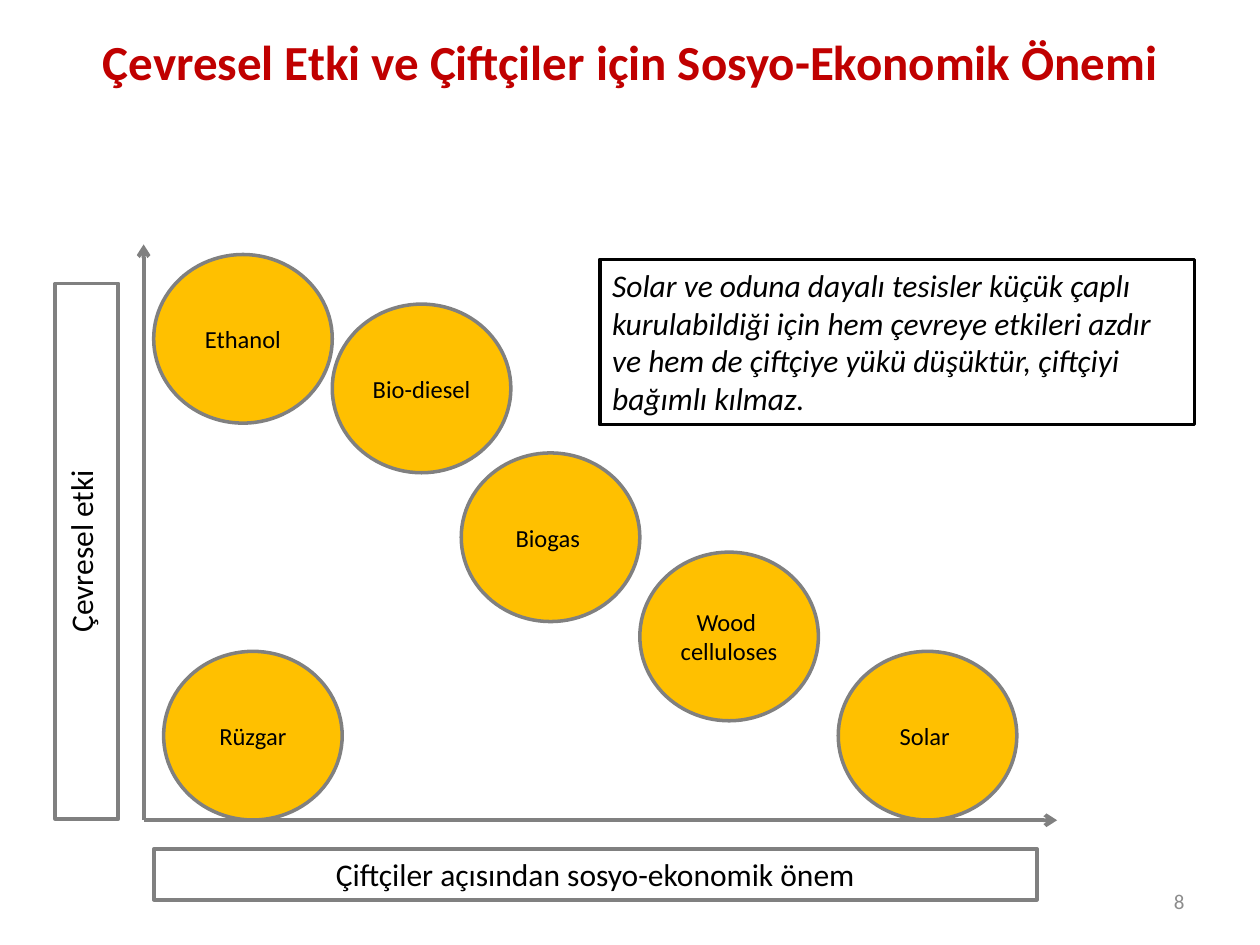
import dataclasses
import typing

import lxml.etree
import pptx
import pptx.dml.color
import pptx.enum.shapes
import pptx.enum.text
import pptx.oxml.ns
import pptx.util

Align = pptx.enum.text.PP_ALIGN
Anchor = pptx.enum.text.MSO_ANCHOR
Form = pptx.enum.shapes.MSO_SHAPE
Inch = pptx.util.Inches
UNIT = pptx.util.Cm(0.2)
LEFT, TOP = Inch(1.22), Inch(2.02)
GREY, BLACK, GOLD = "808080", "000000", "FFC000"


@dataclasses.dataclass
class Disc:
    """An energy source, placed by column and row of the unit grid."""
    name: str
    col: int
    row: int


@dataclasses.dataclass
class Panel:
    """A framed text box, measured in inches."""
    text: str
    area: tuple[float, float, float, float]
    line: str = GREY
    width: float = 2.25
    fill: typing.Optional[str] = None
    align: Align = Align.CENTER
    slant: bool = False
    turn: bool = False


DISCS = [
    Disc("Ethanol", 0, 0),
    Disc("Bio-diesel", 18, 5),
    Disc("Biogas ", 31, 20),
    Disc("Rüzgar", 1, 40),
    Disc("Solar ", 69, 40),
    Disc("Wood \ncelluloses", 49, 30),
]
PANELS = [
    Panel("Çevresel etki", (0.44, 2.25, 0.5, 4.25), turn=True),
    Panel("Çiftçiler açısından sosyo-ekonomik önem", (1.22, 6.74, 7.01, 0.4)),
    Panel("Solar ve oduna dayalı tesisler küçük çaplı kurulabildiği için hem "
          "çevreye etkileri azdır ve hem de çiftçiye yükü düşüktür, çiftçiyi "
          "bağımlı kılmaz.", (4.76, 2.06, 4.72, 1.31), BLACK, 2, "FFFFFF",
          Align.LEFT, slant=True),
]


def paint(hue: str) -> pptx.dml.color.RGBColor:
    """Turn a hex string into a colour."""
    return pptx.dml.color.RGBColor.from_string(hue)


def write(shape, text: str, size: float, hue: str = BLACK,
          align: Align = Align.CENTER, anchor: Anchor = Anchor.MIDDLE,
          bold: bool = False, slant: bool = False) -> None:
    """Set the text of a shape and format its runs."""
    frame = shape.text_frame
    frame.text = text
    frame.word_wrap = True
    frame.vertical_anchor = anchor
    for para in frame.paragraphs:
        para.alignment = align
        for run in para.runs:
            run.font.name = "Calibri"
            run.font.size = pptx.util.Pt(size)
            run.font.bold = bold
            run.font.italic = slant
            run.font.color.rgb = paint(hue)


def place(shape, area: tuple[float, float, float, float]) -> None:
    """Move a shape to an area in inches."""
    shape.left, shape.top, shape.width, shape.height = map(Inch, area)


def frame(shape, line: str, width: float, fill: typing.Optional[str]) -> None:
    """Style the outline and fill of a shape."""
    shape.shadow.inherit = False
    shape.line.color.rgb = paint(line)
    shape.line.width = pptx.util.Pt(width)
    if fill:
        shape.fill.solid()
        shape.fill.fore_color.rgb = paint(fill)
    else:
        shape.fill.background()


def draw_disc(slide, disc: Disc) -> None:
    """Draw one energy source."""
    shape = slide.shapes.add_shape(
        Form.FLOWCHART_CONNECTOR, LEFT + disc.col * UNIT,
        TOP + disc.row * UNIT, 18 * UNIT, 17 * UNIT)
    frame(shape, GREY, 2, GOLD)
    write(shape, disc.name, 14)
    shape.text_frame.word_wrap = False


def draw_panel(slide, panel: Panel) -> None:
    """Draw one framed text box."""
    shape = slide.shapes.add_shape(Form.RECTANGLE, *map(Inch, panel.area))
    frame(shape, panel.line, panel.width, panel.fill)
    write(shape, panel.text, 18, align=panel.align, anchor=Anchor.TOP,
          slant=panel.slant)
    if panel.turn:
        shape.text_frame._txBody.bodyPr.set("vert", "vert270")


def draw_axis(slide, end_x: float, end_y: float) -> None:
    """Draw an arrow from the chart's corner."""
    axis = slide.shapes.add_connector(
        pptx.enum.shapes.MSO_CONNECTOR.STRAIGHT,
        *map(Inch, (1.14, 6.51, end_x, end_y)))
    axis.line.color.rgb = paint(GREY)
    axis.line.width = pptx.util.Pt(2.25)
    tag = pptx.oxml.ns.qn
    tip = lxml.etree.SubElement(axis.line._get_or_add_ln(), tag("a:tailEnd"))
    tip.set("type", "arrow")
    lxml.etree.SubElement(axis._element.spPr, tag("a:effectLst"))


def main() -> None:
    """Build and save the slide."""
    deck = pptx.Presentation()
    deck.slide_width, deck.slide_height = Inch(10), Inch(7.5)
    slide = deck.slides.add_slide(deck.slide_layouts[5])
    title = slide.shapes.title
    place(title, (0.5, 0.13, 9, 0.71))
    write(title, "Çevresel Etki ve Çiftçiler için Sosyo-Ekonomik Önemi", 28,
          "C00000", bold=True)
    draw_axis(slide, 1.14, 1.94)
    draw_axis(slide, 8.39, 6.51)
    for disc in DISCS:
        draw_disc(slide, disc)
    for panel in PANELS:
        draw_panel(slide, panel)
    page = slide.shapes.add_textbox(*map(Inch, (7.17, 6.95, 2.33, 0.4)))
    write(page, "8", 12, "8C8C8C", Align.RIGHT)
    deck.save("out.pptx")


if __name__ == "__main__":
    main()
